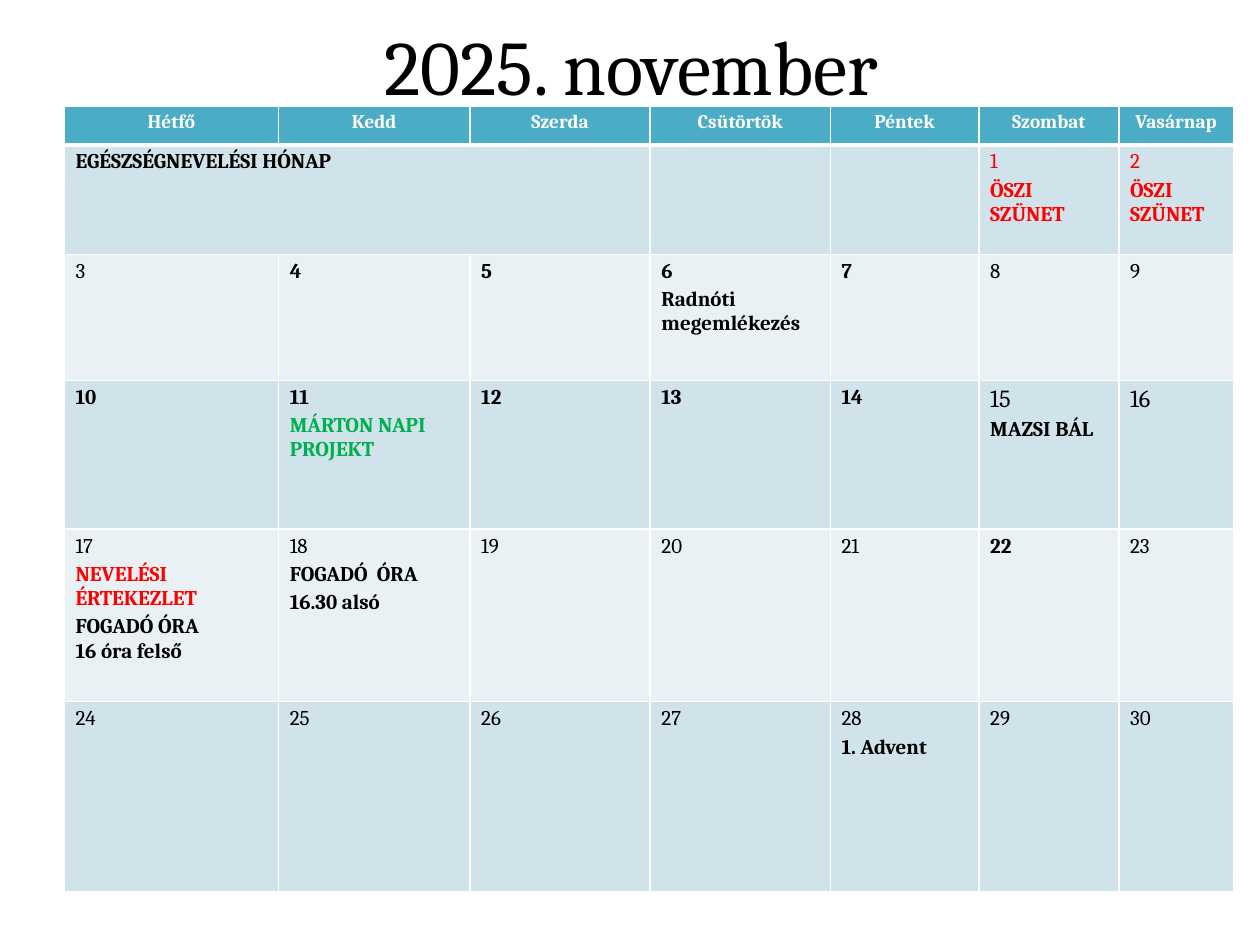
from lxml import etree
from pptx import Presentation
from pptx.dml.color import RGBColor
from pptx.enum.text import MSO_ANCHOR, PP_ALIGN
from pptx.oxml.ns import qn
from pptx.util import Inches, Pt

CENTER, LEFT = PP_ALIGN.CENTER, PP_ALIGN.LEFT
MIDDLE, TOP = MSO_ANCHOR.MIDDLE, MSO_ANCHOR.TOP

FONT = "Cambria"
BLACK, WHITE, RED, GREEN = "000000", "FFFFFF", "FF0000", "00B050"
HEADER_FILL = "4BACC6"
BAND_FILLS = ("D0E3EA", "E9F1F5")

# Content
TITLE = "2025. november"
WEEKDAYS = ["Hétfő", "Kedd", "Szerda", "Csütörtök", "Péntek", "Szombat", "Vasárnap"]
MONTH_THEME = "EGÉSZSÉGNEVELÉSI HÓNAP"
FIRST_WEEKDAY, DAY_COUNT = 5, 30
EVENTS = {
    1: [("ÖSZI SZÜNET", RED)],
    2: [("ÖSZI SZÜNET", RED)],
    6: [("Radnóti megemlékezés", BLACK)],
    11: [("MÁRTON NAPI PROJEKT", GREEN)],
    15: [("MAZSI BÁL", BLACK)],
    17: [("NEVELÉSI ÉRTEKEZLET", RED), ("FOGADÓ ÓRA\n16 óra felső", BLACK)],
    18: [("FOGADÓ  ÓRA", BLACK), ("16.30 alsó", BLACK)],
    28: [("1. Advent", BLACK)],
}
BOLD_DAYS = {4, 5, 6, 7, 10, 11, 12, 13, 14, 22}
LARGE_DAYS = {15, 16}
RED_DAYS = {1, 2}

COLUMN_WIDTHS = [1.7, 1.52, 1.43, 1.43, 1.18, 1.11, 0.91]
ROW_HEIGHTS = [0.31, 0.87, 1, 1.18, 1.37, 1.51]


def color(value):
    return RGBColor.from_string(value)


def add_text(para, text, size, shade, bold=False, align=LEFT):
    para.alignment = align
    for index, line in enumerate(text.split("\n")):
        if index:
            para.add_line_break()
        span = para.add_run()
        span.text = line
        span.font.name = FONT
        span.font.size = Pt(size)
        span.font.bold = bold
        span.font.color.rgb = color(shade)


def add_border(cell, side, width):
    line = etree.SubElement(cell._tc.get_or_add_tcPr(), qn("a:ln" + side), w=str(Pt(width)))
    fill = etree.SubElement(line, qn("a:solidFill"))
    etree.SubElement(fill, qn("a:srgbClr"), val=WHITE)


def style_cell(cell, row):
    cell.margin_left = cell.margin_right = Inches(0.09)
    cell.margin_top = cell.margin_bottom = Inches(0.04)
    cell.vertical_anchor = TOP
    # The line under the weekday names is thicker
    widths = {"L": 1, "R": 1, "T": 3 if row == 1 else 1, "B": 3 if row == 0 else 1}
    for side, width in widths.items():
        add_border(cell, side, width)
    cell.fill.solid()
    cell.fill.fore_color.rgb = color(BAND_FILLS[(row - 1) % 2] if row else HEADER_FILL)


def fill_day(cell, day):
    frame = cell.text_frame
    add_text(frame.paragraphs[0], str(day), 14 if day in LARGE_DAYS else 12,
             RED if day in RED_DAYS else BLACK, day in BOLD_DAYS)
    for text, shade in EVENTS.get(day, []):
        para = frame.add_paragraph()
        para.space_before = Pt(2.4)
        add_text(para, text, 12, shade, bold=True)


def main():
    deck = Presentation()
    deck.slide_width, deck.slide_height = Inches(10), Inches(7.5)
    page = deck.slides.add_slide(deck.slide_layouts[5])

    # Title
    title = page.shapes.title
    title.left, title.top = Inches(0.51), Inches(-0.11)
    title.width, title.height = Inches(9), Inches(1.25)
    title.text_frame.vertical_anchor = MIDDLE
    add_text(title.text_frame.paragraphs[0], TITLE, 44, BLACK, align=CENTER)

    # Calendar grid
    grid = page.shapes.add_table(
        len(ROW_HEIGHTS), len(COLUMN_WIDTHS), Inches(0.51), Inches(0.84),
        Inches(sum(COLUMN_WIDTHS)), Inches(sum(ROW_HEIGHTS))).table
    for column, width in zip(grid.columns, COLUMN_WIDTHS):
        column.width = Inches(width)
    for row, height in zip(grid.rows, ROW_HEIGHTS):
        row.height = Inches(height)
    for row in range(len(ROW_HEIGHTS)):
        for column in range(len(COLUMN_WIDTHS)):
            style_cell(grid.cell(row, column), row)

    # Weekday names and month theme
    for column, name in enumerate(WEEKDAYS):
        add_text(grid.cell(0, column).text_frame.paragraphs[0], name, 11, WHITE, True, CENTER)
    grid.cell(1, 0).merge(grid.cell(1, 2))
    add_text(grid.cell(1, 0).text_frame.paragraphs[0], MONTH_THEME, 12, BLACK, bold=True)

    # Days with their events
    for day in range(1, DAY_COUNT + 1):
        week, weekday = divmod(FIRST_WEEKDAY + day - 1, len(WEEKDAYS))
        fill_day(grid.cell(week + 1, weekday), day)

    deck.save("out.pptx")


if __name__ == "__main__":
    main()
